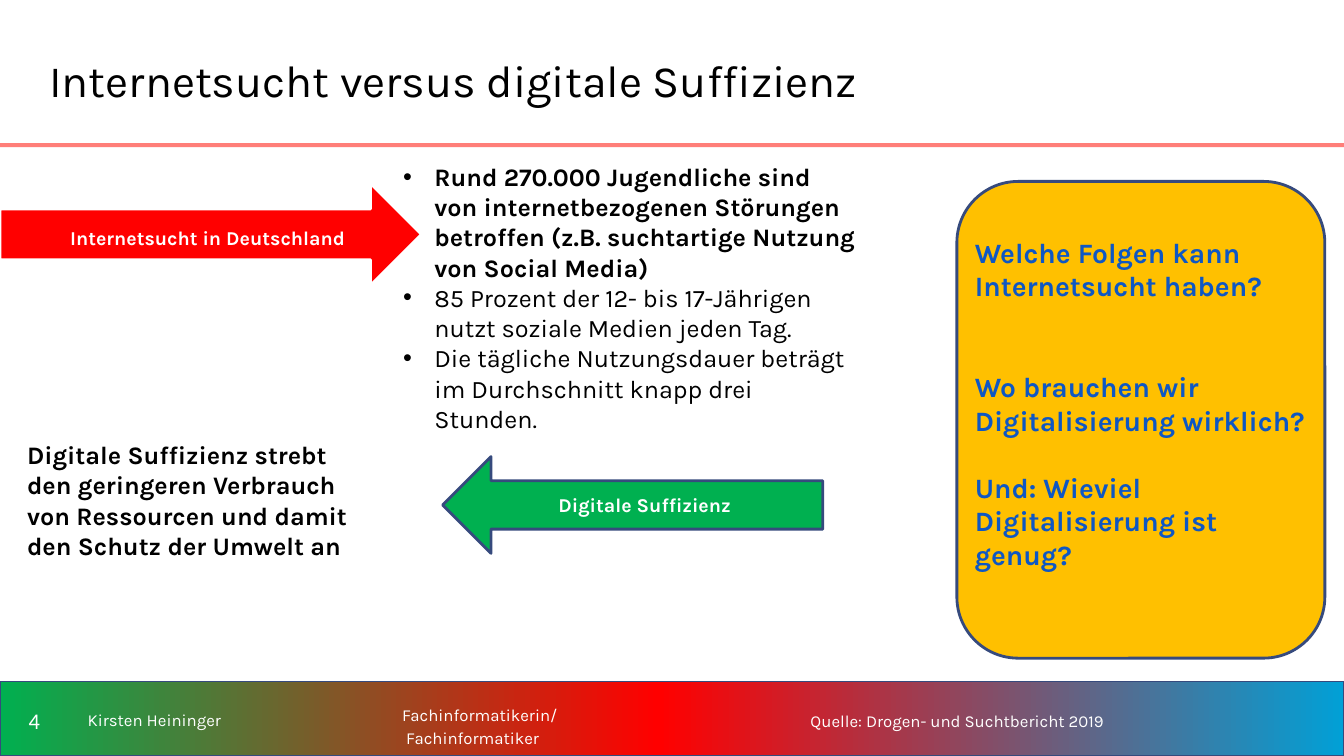
from copy import deepcopy

from lxml import etree
from pptx import Presentation
from pptx.dml.color import RGBColor
from pptx.enum.shapes import MSO_SHAPE
from pptx.enum.text import MSO_ANCHOR, PP_ALIGN
from pptx.oxml.ns import qn
from pptx.util import Inches, Pt

RECTANGLE = MSO_SHAPE.RECTANGLE
ROUNDED = MSO_SHAPE.ROUNDED_RECTANGLE
RIGHT_ARROW = MSO_SHAPE.RIGHT_ARROW
LEFT_ARROW = MSO_SHAPE.LEFT_ARROW
TOP, MIDDLE = MSO_ANCHOR.TOP, MSO_ANCHOR.MIDDLE
LEFT, CENTER = PP_ALIGN.LEFT, PP_ALIGN.CENTER

COLORS = {
    "black": "000000",
    "white": "FFFFFF",
    "navy": "364A7D",
    "blue": "0E57C4",
    "green": "00B050",
    "red": "FF0000",
    "sky": "01A0D6",
    "coral": "FF7E79",
    "amber": "FFC000",
}
PADDING = (0.1, 0.05, 0.1, 0.05)
FOOTER = {"size": 12, "color": "white"}
STATEMENT = {"size": 18, "bold": True}
ARROW_LABEL = {"size": 14, "color": "white", "bold": True}
QUESTION = {"size": 20, "color": "blue", "bold": True}


def rgb(name):
    return RGBColor.from_string(COLORS[name])


def format_text(paragraph, size, color="black", bold=False, name="Karla"):
    values = {"size": Pt(size), "bold": bold, "name": name}
    for attribute, value in values.items():
        setattr(paragraph.font, attribute, value)
    paragraph.font.color.rgb = rgb(color)


def set_indent(paragraph, indent):
    properties = paragraph._p.get_or_add_pPr()
    properties.set("marL", str(Inches(indent)))
    properties.set("indent", str(-Inches(indent)))
    return properties


def add_bullet(paragraph):
    properties = set_indent(paragraph, 0.31)
    bullet_color = etree.SubElement(properties, qn("a:buClr"))
    etree.SubElement(bullet_color, qn("a:srgbClr")).set("val", COLORS["black"])
    etree.SubElement(properties, qn("a:buFont")).set("typeface", "Arial")
    etree.SubElement(properties, qn("a:buChar")).set("char", "•")


def set_frame(shape, anchor=MIDDLE, padding=PADDING):
    left, top, right, bottom = (Inches(value) for value in padding)
    values = {
        "word_wrap": True,
        "vertical_anchor": anchor,
        "margin_left": left,
        "margin_top": top,
        "margin_right": right,
        "margin_bottom": bottom,
    }
    for attribute, value in values.items():
        setattr(shape.text_frame, attribute, value)


def write(shape, text, style, alignment=LEFT):
    paragraph = shape.text_frame.paragraphs[0]
    paragraph.text = text
    paragraph.alignment = alignment
    format_text(paragraph, **style)
    return paragraph


def add_label(slide, box, text, style, alignment=LEFT, anchor=MIDDLE, padding=PADDING):
    shape = slide.shapes.add_textbox(*(Inches(value) for value in box))
    set_frame(shape, anchor, padding)
    return write(shape, text, style, alignment)


def add_figure(slide, kind, box, fill, line=None, width=2):
    shape = slide.shapes.add_shape(kind, *(Inches(value) for value in box))
    shape.shadow.inherit = False
    shape.fill.solid()
    shape.fill.fore_color.rgb = rgb(fill)
    if line:
        shape.line.color.rgb = rgb(line)
        shape.line.width = Pt(width)
    else:
        shape.line.fill.background()
    return shape


def add_title(slide, text):
    title = slide.shapes.title
    box = {"left": 0.39, "top": 0.2, "width": 12.6, "height": 1.18}
    for attribute, value in box.items():
        setattr(title, attribute, Inches(value))
    set_frame(title)
    write(title, text, {"size": 32})


def add_footer_band(slide):
    band = add_figure(slide, RECTANGLE, (0, 6.76, 13.33, 0.74), "green", "navy", 1)
    band.fill.gradient()
    band.fill.gradient_angle = 0
    stop_list = band._element.spPr.find(".//" + qn("a:gsLst"))
    stop_list.append(deepcopy(stop_list[-1]))
    stops = ((0, "green"), (0.49, "red"), (1, "sky"))
    for stop, (position, color) in zip(band.fill.gradient_stops, stops):
        stop.position = position
        stop.color.rgb = rgb(color)


def add_footer(slide):
    add_footer_band(slide)
    notes = (
        ((3.89, 6.89, 3, 0.61), "Fachinformatikerin/Fachinformatiker"),
        ((7.94, 6.84, 5.05, 0.61), "Quelle: Drogen- und Suchtbericht 2019"),
    )
    for box, text in notes:
        paragraph = add_label(slide, box, text, FOOTER)
        set_indent(paragraph, 0.04)
        paragraph.line_spacing = 1.1
    add_label(slide, (0.77, 6.84, 2.78, 0.61), "Kirsten Heininger", FOOTER)
    number_style = {"size": 16, "color": "white", "name": "Calibri"}
    add_label(slide, (0, 6.84, 0.68, 0.61), "4", number_style, CENTER)


def add_facts(slide):
    facts = (
        ("Rund 270.000 Jugendliche sind von internetbezogenen Störungen betroffen "
         "(z.B. suchtartige Nutzung von Social Media)", True),
        ("85 Prozent der 12- bis 17-Jährigen nutzt soziale Medien jeden Tag.", False),
        ("Die tägliche Nutzungsdauer beträgt im Durchschnitt knapp drei Stunden.", False),
    )
    shape = slide.shapes.add_textbox(Inches(3.9), Inches(1.55), Inches(4.73), Inches(3.2))
    set_frame(shape, TOP)
    frame = shape.text_frame
    for index, (text, bold) in enumerate(facts):
        paragraph = frame.add_paragraph() if index else frame.paragraphs[0]
        paragraph.text = text
        add_bullet(paragraph)
        format_text(paragraph, 18, bold=bold)


def add_questions(slide):
    questions = (
        ("Welche Folgen kann Internetsucht haben?", 0),
        ("Wo brauchen wir Digitalisierung wirklich?", 48),
        ("Und: Wieviel Digitalisierung ist genug?", 24),
    )
    card = add_figure(slide, ROUNDED, (9.49, 1.8, 3.65, 4.73), "amber", "navy")
    set_frame(card, padding=(0, 0, 0, 0.33))
    frame = card.text_frame
    for index, (text, gap) in enumerate(questions):
        paragraph = frame.add_paragraph() if index else frame.paragraphs[0]
        paragraph.text = text
        paragraph.alignment = LEFT
        paragraph.space_before = Pt(gap)
        format_text(paragraph, **QUESTION)


def add_arrows(slide):
    add_figure(slide, RIGHT_ARROW, (0, 1.82, 4.18, 1.01), "red", "white")
    paragraph = add_label(slide, (0.34, 1.98, 3.44, 0.79), "Internetsucht in Deutschland",
                          ARROW_LABEL, CENTER, padding=(0, 0.16, 0, 0.16))
    paragraph.line_spacing = 0.9
    arrow = add_figure(slide, LEFT_ARROW, (4.39, 4.53, 3.77, 0.96), "green", "navy")
    set_frame(arrow)
    write(arrow, "Digitale Suffizienz", ARROW_LABEL, CENTER)


def main():
    presentation = Presentation()
    presentation.slide_width = Inches(13.33)
    presentation.slide_height = Inches(7.5)
    slide = presentation.slides.add_slide(presentation.slide_layouts[5])
    add_title(slide, "Internetsucht versus digitale Suffizienz")
    add_figure(slide, RECTANGLE, (0, 1.42, 13.33, 0.04), "coral")
    add_footer(slide)
    add_facts(slide)
    add_questions(slide)
    add_arrows(slide)
    add_label(slide, (0.17, 4.31, 3.66, 1.31),
              "Digitale Suffizienz strebt den geringeren Verbrauch von Ressourcen "
              "und damit den Schutz der Umwelt an", STATEMENT, anchor=TOP)
    presentation.save("out.pptx")


if __name__ == "__main__":
    main()
